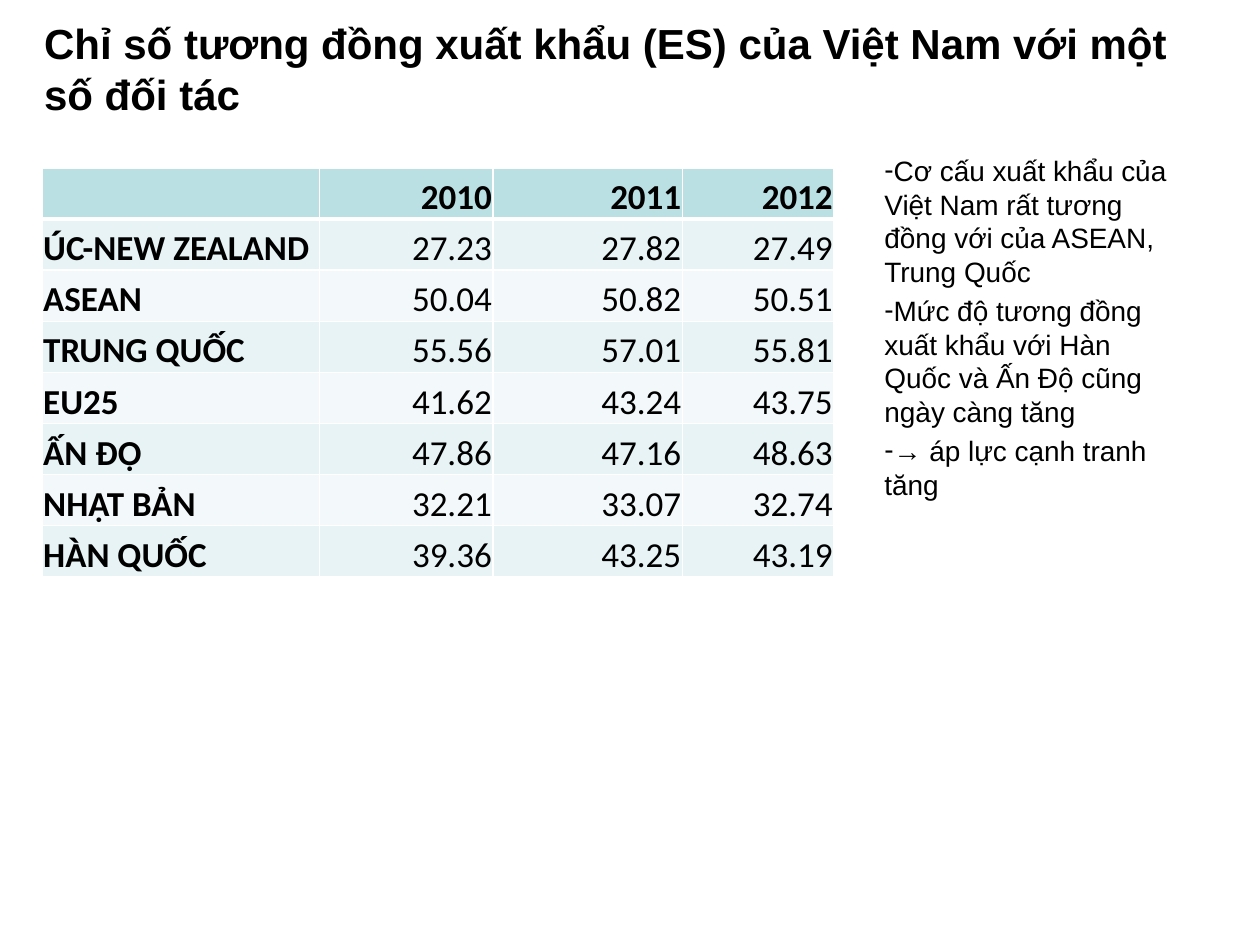
from lxml import etree
from pptx import Presentation
from pptx.dml.color import RGBColor
from pptx.enum.text import MSO_ANCHOR, MSO_AUTO_SIZE, PP_ALIGN
from pptx.oxml.ns import qn
from pptx.util import Pt

LEFT, RIGHT = PP_ALIGN.LEFT, PP_ALIGN.RIGHT
TOP, BOTTOM = MSO_ANCHOR.TOP, MSO_ANCHOR.BOTTOM
NO_FIT = MSO_AUTO_SIZE.NONE

COLORS = {
    "text": "000000",
    "header": "BBE0E3",
    "odd_row": "E7F3F4",
    "even_row": "F3F9FA",
    "border": "FFFFFF",
}

TITLE = "Chỉ số tương đồng xuất khẩu (ES) của Việt Nam với một số đối tác"
REMARKS = [
    "Cơ cấu xuất khẩu của Việt Nam rất tương đồng với của ASEAN, Trung Quốc",
    "Mức độ tương đồng xuất khẩu với Hàn Quốc và Ấn Độ cũng ngày càng tăng",
    "→ áp lực cạnh tranh tăng",
]
SIMILARITY = [
    ["", "2010", "2011", "2012"],
    ["ÚC-NEW ZEALAND", "27.23", "27.82", "27.49"],
    ["ASEAN", "50.04", "50.82", "50.51"],
    ["TRUNG QUỐC", "55.56", "57.01", "55.81"],
    ["EU25", "41.62", "43.24", "43.75"],
    ["ẤN ĐỘ", "47.86", "47.16", "48.63"],
    ["NHẬT BẢN", "32.21", "33.07", "32.74"],
    ["HÀN QUỐC", "39.36", "43.25", "43.19"],
]
COLUMN_WIDTHS = [158.6, 99.2, 108.2, 86.6]
ROW_HEIGHT = 29.2

TITLE_FONT = {"name": "Arial", "size": Pt(24), "bold": True}
REMARK_FONT = {"name": "Arial", "size": Pt(16), "bold": False}
CELL_FONT = {"name": "Calibri", "size": Pt(20)}
CELL_FORMAT = {
    "vertical_anchor": BOTTOM,
    "margin_left": Pt(0.7),
    "margin_right": Pt(0.7),
    "margin_top": Pt(0.7),
    "margin_bottom": Pt(0),
}


def apply_format(target, values):
    for name, value in values.items():
        setattr(target, name, value)


def write_span(para, text, font):
    span = para.add_run()
    span.text = text
    apply_format(span.font, font)
    span.font.color.rgb = RGBColor.from_string(COLORS["text"])


def place(box, left, top, width, height, anchor):
    """Move a placeholder and set up its text frame."""
    apply_format(box, {"left": Pt(left), "top": Pt(top),
                       "width": Pt(width), "height": Pt(height)})
    apply_format(box.text_frame, {"word_wrap": True, "auto_size": NO_FIT,
                                  "vertical_anchor": anchor})


def set_dash_bullet(para):
    properties = para._p.get_or_add_pPr()
    properties.set("marL", "0")
    properties.set("indent", "0")
    etree.SubElement(properties, qn("a:buChar"), char="-")


def add_title(page):
    box = page.shapes.title
    place(box, 18, 18, 671, 53.3, BOTTOM)
    para = box.text_frame.paragraphs[0]
    para.alignment = LEFT
    write_span(para, TITLE, TITLE_FONT)


def add_remarks(page):
    box = page.placeholders[1]
    place(box, 498.2, 84.2, 180, 270, TOP)
    frame = box.text_frame
    for index, remark in enumerate(REMARKS):
        para = frame.add_paragraph() if index else frame.paragraphs[0]
        apply_format(para, {"alignment": LEFT, "space_before": Pt(3.2)})
        set_dash_bullet(para)
        write_span(para, remark, REMARK_FONT)


def set_borders(cell, bottom_width):
    properties = cell._tc.get_or_add_tcPr()
    widths = {"lnL": 1, "lnR": 1, "lnT": 1, "lnB": bottom_width}
    for position, (side, width) in enumerate(widths.items()):
        line = etree.Element(qn(f"a:{side}"), w=str(Pt(width)))
        fill = etree.SubElement(line, qn("a:solidFill"))
        etree.SubElement(fill, qn("a:srgbClr"), val=COLORS["border"])
        properties.insert(position, line)


def fill_cell(cell, text, row, column):
    is_header = row == 0
    color = "header" if is_header else "odd_row" if row % 2 else "even_row"
    apply_format(cell, CELL_FORMAT)
    cell.fill.solid()
    cell.fill.fore_color.rgb = RGBColor.from_string(COLORS[color])
    set_borders(cell, 3 if is_header else 1)
    if text:
        para = cell.text_frame.paragraphs[0]
        para.alignment = RIGHT if column else LEFT
        write_span(para, text, {**CELL_FONT, "bold": is_header or column == 0})


def add_similarity_table(page):
    rows = len(SIMILARITY)
    frame = page.shapes.add_table(
        rows, len(COLUMN_WIDTHS), Pt(24), Pt(96),
        Pt(sum(COLUMN_WIDTHS)), Pt(rows * ROW_HEIGHT))
    table = frame.table
    for column, width in zip(table.columns, COLUMN_WIDTHS):
        column.width = Pt(width)
    for row, values in enumerate(SIMILARITY):
        table.rows[row].height = Pt(ROW_HEIGHT)
        for column, text in enumerate(values):
            fill_cell(table.cell(row, column), text, row, column)


def main():
    deck = Presentation()
    deck.slide_width, deck.slide_height = Pt(720), Pt(540)
    page = deck.slides.add_slide(deck.slide_layouts[1])
    add_title(page)
    add_remarks(page)
    add_similarity_table(page)
    deck.save("out.pptx")


if __name__ == "__main__":
    main()
